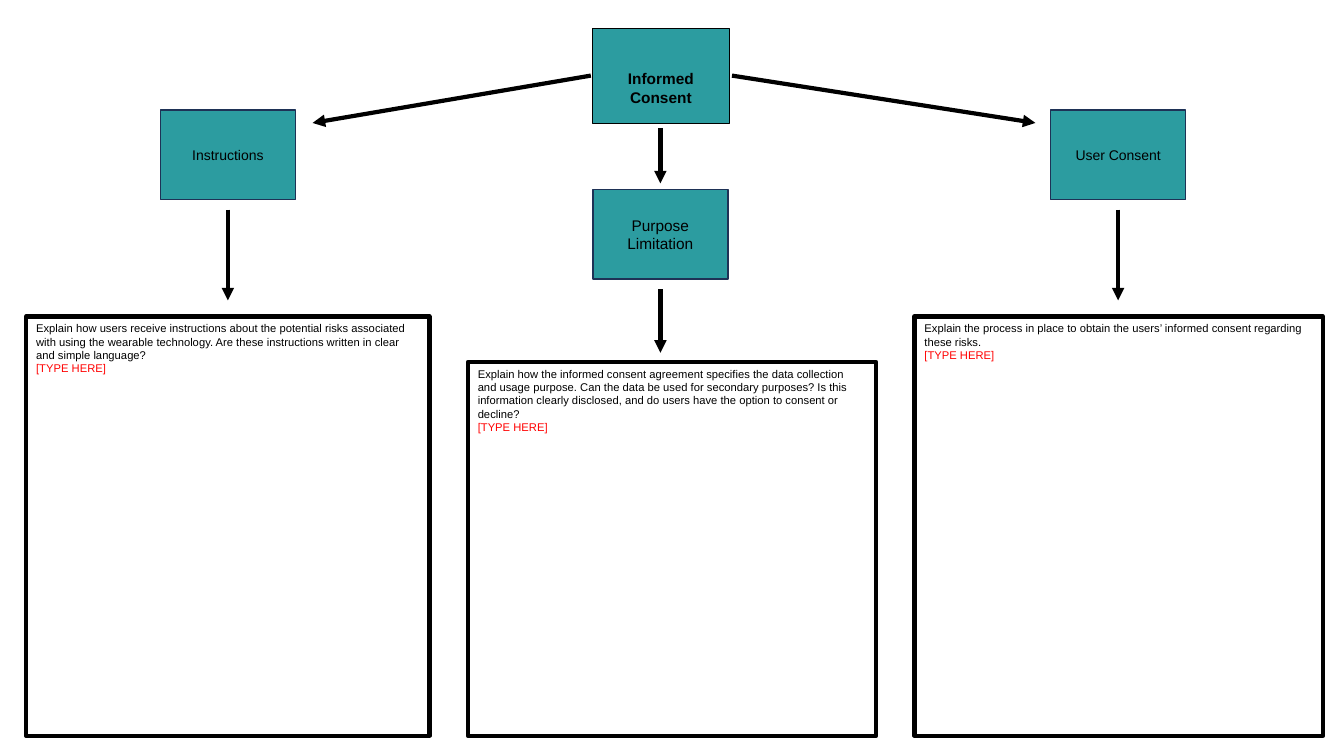
import pptx
import pptx.util
import pptx.dml.color
import pptx.enum.shapes
import pptx.enum.text
import pptx.oxml.ns
from dataclasses import dataclass
from lxml import etree

Inches = pptx.util.Inches
Pt = pptx.util.Pt
RGB = pptx.dml.color.RGBColor.from_string
ALIGN = pptx.enum.text.PP_ALIGN
ANCHOR = pptx.enum.text.MSO_ANCHOR


@dataclass(frozen=True)
class Theme:
    font: str = "Arial"
    teal: str = "2C9CA0"
    navy: str = "1E3256"
    black: str = "000000"
    white: str = "FFFFFF"
    red: str = "FF0000"
    heading: int = 11
    label: int = 10
    body: int = 8
    heavy: int = 3


THEME = Theme()


def add_box(s, box, fill, line, width):
    """Add a bordered rectangle."""
    sp = s.shapes.add_shape(pptx.enum.shapes.MSO_SHAPE.RECTANGLE,
                            *(Inches(v) for v in box))
    sp.shadow.inherit = False
    sp.fill.solid()
    sp.fill.fore_color.rgb = RGB(fill)
    sp.line.color.rgb = RGB(line)
    sp.line.width = Pt(width)
    sp.text_frame.word_wrap = True
    return sp


def add_run(p, text, size, color, bold=False):
    r = p.add_run()
    r.text = text
    r.font.name = THEME.font
    r.font.size = Pt(size)
    r.font.bold = bold
    r.font.color.rgb = RGB(color)


def add_node(s, text, box, size, line=THEME.navy, width=1, bold=False):
    """Add a teal box with a centred label."""
    sp = add_box(s, box, THEME.teal, line, width)
    tf = sp.text_frame
    tf.vertical_anchor = ANCHOR.MIDDLE
    p = tf.paragraphs[0]
    p.alignment = ALIGN.CENTER
    add_run(p, text, size, THEME.black, bold)
    return sp


def add_answer(s, question, box):
    """Add a framed question with a prompt for the answer."""
    tf = add_box(s, box, THEME.white, THEME.black, THEME.heavy).text_frame
    tf.vertical_anchor = ANCHOR.TOP
    p = tf.paragraphs[0]
    p.alignment = ALIGN.LEFT
    add_run(p, question, THEME.body, THEME.black)
    p = tf.add_paragraph()
    p.alignment = ALIGN.LEFT
    add_run(p, "[TYPE HERE]", THEME.body, THEME.red)


def add_arrow(s, x1, y1, x2, y2):
    cx = s.shapes.add_connector(pptx.enum.shapes.MSO_CONNECTOR.STRAIGHT,
                                Inches(x1), Inches(y1), Inches(x2), Inches(y2))
    cx.line.color.rgb = RGB(THEME.black)
    cx.line.width = Pt(THEME.heavy)
    qn = pptx.oxml.ns.qn
    etree.SubElement(cx.line._get_or_add_ln(), qn("a:tailEnd"), type="triangle")
    etree.SubElement(cx._element.spPr, qn("a:effectLst"))


def main():
    prs = pptx.Presentation()
    prs.slide_width, prs.slide_height = Inches(13.33), Inches(7.5)
    s = prs.slides.add_slide(prs.slide_layouts[6])

    # Root topic, its label set low in the box
    root = add_node(s, "Informed Consent", (5.88, 0.28, 1.35, 0.94),
                    THEME.heading, THEME.black, 0.5, True)
    root.text_frame.vertical_anchor = ANCHOR.TOP
    root.text_frame.margin_top = Inches(0.41)

    # Branches: label, size, node left and top, arrow x and end, question, frame left and width
    branches = [
        ("Instructions", THEME.label, 1.59, 1.09, 2.26, 2.98,
         "Explain how users receive instructions about the potential risks "
         "associated with using the wearable technology. Are these instructions "
         "written in clear and simple language?", 0.26, 4),
        ("Purpose Limitation", THEME.heading, 5.88, 1.88, 6.55, 3.5,
         "Explain how the informed consent agreement specifies the data "
         "collection and usage purpose. Can the data be used for secondary "
         "purposes? Is this information clearly disclosed, and do users have "
         "the option to consent or decline?", 4.64, 4.05),
        ("User Consent", THEME.label, 10.42, 1.09, 11.09, 2.98,
         "Explain the process in place to obtain the users’ informed consent "
         "regarding these risks.", 9.07, 4.05),
    ]
    node_w, node_h, frame_bottom = 1.34, 0.89, 7.3
    for label, size, x, y, arrow_x, arrow_end, question, left, width in branches:
        add_node(s, label, (x, y, node_w, node_h), size)
        frame_top = 3.59 if y > 1.5 else 3.14
        add_answer(s, question, (left, frame_top, width, frame_bottom - frame_top))
        add_arrow(s, arrow_x, y + node_h + 0.1, arrow_x, arrow_end)

    # Arrows from the root to each branch
    add_arrow(s, 5.86, 0.75, 3.1, 1.22)
    add_arrow(s, 6.55, 1.27, 6.55, 1.82)
    add_arrow(s, 7.26, 0.75, 10.27, 1.22)

    prs.save("out.pptx")


if __name__ == "__main__":
    main()
